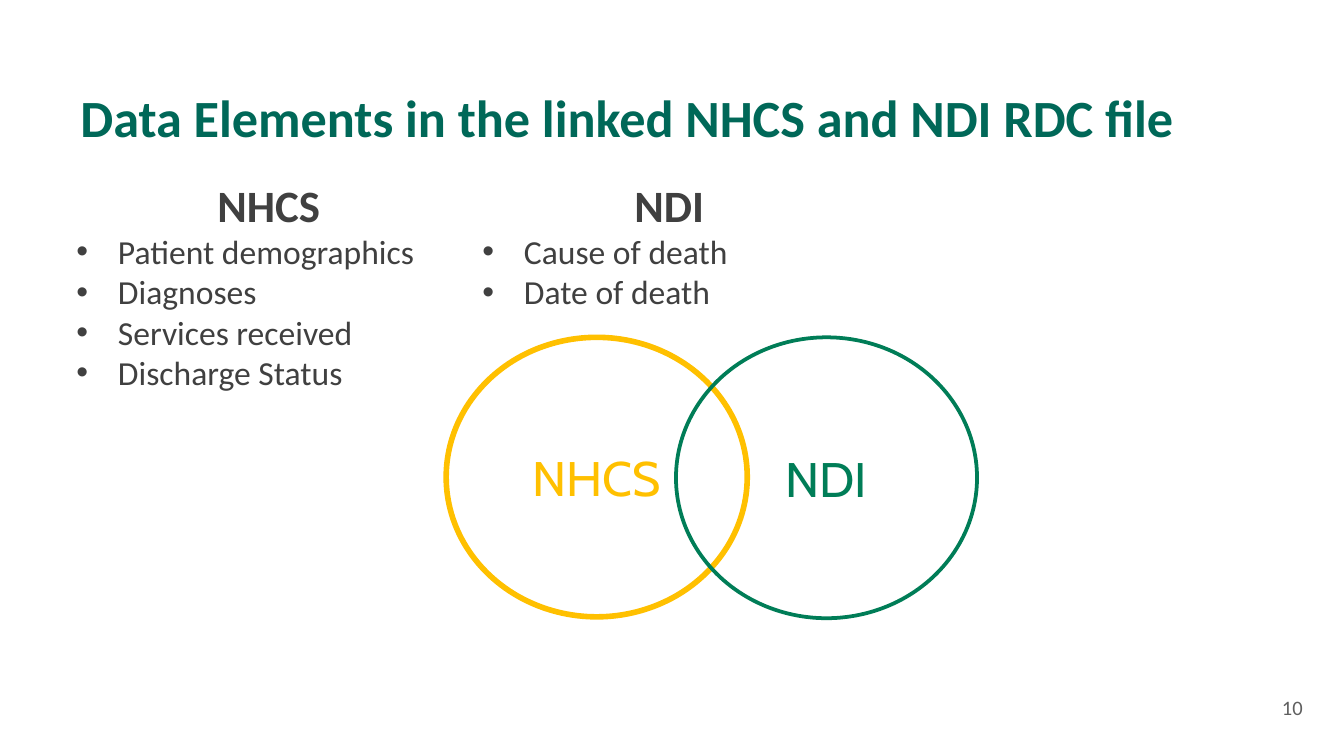
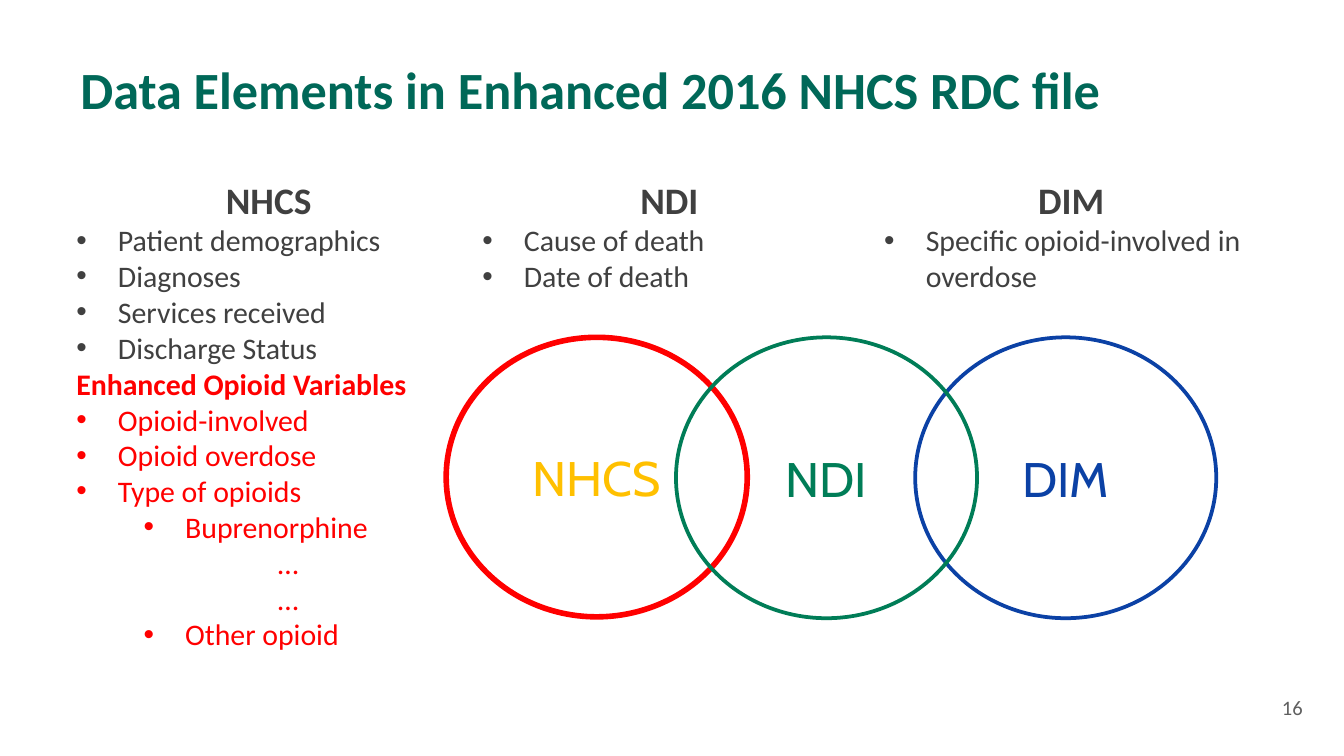
from lxml.etree import SubElement
from pptx import Presentation
from pptx.dml.color import RGBColor
from pptx.enum.shapes import MSO_SHAPE as SHAPE
from pptx.enum.text import MSO_ANCHOR as ANCHOR, PP_ALIGN as ALIGN
from pptx.oxml.ns import qn
from pptx.util import Inches, Pt

TEAL = RGBColor(0x00, 0x68, 0x58)
DARK = RGBColor(0x40, 0x40, 0x40)
GRAY = RGBColor(0x5F, 0x5F, 0x5F)
RED = RGBColor(0xFF, 0x00, 0x00)
GOLD = RGBColor(0xFF, 0xC0, 0x00)
GREEN = RGBColor(0x00, 0x7D, 0x57)
BLUE = RGBColor(0x0B, 0x41, 0xA5)

HANGING = 0.31
COLUMN_TOP = 1.27
CIRCLE_TOP = 2.51


def write(frame, text, size, color, font="Calibri", bold=False, align=ALIGN.LEFT,
          indent=0, bullet=False, spacing=None):
    """Fill the frame's empty first paragraph, or append one, with formatted text."""
    para = frame.paragraphs[0]
    if para.runs:
        para = frame.add_paragraph()
    para.alignment = align
    para.line_spacing = spacing
    props = para._p.get_or_add_pPr()
    props.set("marL", str(Inches(indent)))
    props.set("indent", str(Inches(-HANGING if bullet else 0)))
    if bullet:
        SubElement(props, qn("a:buFont"), typeface="Arial")
        SubElement(props, qn("a:buChar"), char="•")
    span = para.add_run()
    span.text = text
    span.font.name = font
    span.font.size = Pt(size)
    span.font.bold = bold
    span.font.color.rgb = color


def add_box(page, left, top, width, height, anchor=ANCHOR.TOP):
    frame = page.shapes.add_textbox(
        Inches(left), Inches(top), Inches(width), Inches(height)).text_frame
    frame.word_wrap = True
    frame.vertical_anchor = anchor
    return frame


# Column entries: (text, level), where level None is a bold subheading
# and "more" is an unbulleted continuation line.
patient_items = [("Patient demographics", 0), ("Diagnoses", 0),
                 ("Services received", 0), ("Discharge Status", 0)]
opioid_items = [("Enhanced Opioid Variables", None), ("Opioid-involved", 0),
                ("Opioid overdose", 0), ("Type of opioids", 0), ("Buprenorphine", 1),
                ("…", "more"), ("…", "more"), ("Other opioid", 1)]
death_items = [("Cause of death", 0), ("Date of death", 0)]
drug_items = [("Specific opioid-involved in overdose", 0)]

# Columns: heading, left, width, height, dark items, red items
# Circles: label, left, height, outline colour, outline width, label colour
ndi_circle = ("NDI", 5.03, 2.09, GREEN, 2, GREEN)
slides = [
    dict(number="10", title="Data Elements in the linked NHCS and NDI RDC file",
         title_top=0.21, heading_size=24, item_size=18,
         columns=[("NHCS", 0.47, 3.06, 2.05, patient_items, []),
                  ("NDI", 3.49, 2.98, 1.11, death_items, [])],
         circles=[("NHCS", 3.32, 2.08, GOLD, 3, GOLD), ndi_circle]),
    dict(number="16", title="Data Elements in Enhanced 2016 NHCS RDC file",
         title_top=0, heading_size=20, item_size=16,
         columns=[("NHCS", 0.47, 3.06, 3.67, patient_items, opioid_items),
                  ("NDI", 3.49, 2.98, 0.98, death_items, []),
                  ("DIM", 6.48, 2.98, 0.98, drug_items, [])],
         circles=[("NHCS", 3.32, 2.08, RED, 3, GOLD),
                  ("DIM", 6.81, 2.09, BLUE, 2, BLUE), ndi_circle]),
]

deck = Presentation()
deck.slide_width = Inches(10)
deck.slide_height = Inches(10) * 9 // 16

for content in slides:
    page = deck.slides.add_slide(deck.slide_layouts[6])
    write(add_box(page, 9.44, 5.12, 0.41, 0.29), content["number"], 11, GRAY)
    title = add_box(page, 0.5, content["title_top"], 9, 0.94, ANCHOR.BOTTOM)
    write(title, content["title"], 28, TEAL, bold=True, spacing=Pt(30))

    for heading, left, width, height, dark_items, red_items in content["columns"]:
        column = add_box(page, left, COLUMN_TOP, width, height)
        write(column, heading, content["heading_size"], DARK, bold=True,
              align=ALIGN.CENTER)
        for items, color in ((dark_items, DARK), (red_items, RED)):
            for text, level in items:
                if level is None:
                    write(column, text, content["item_size"], color, bold=True)
                elif level == "more":
                    write(column, text, content["item_size"], color, indent=1.5)
                else:
                    write(column, text, content["item_size"], color,
                          indent=HANGING + level * 0.5, bullet=True)

    for label, left, height, outline, weight, color in content["circles"]:
        circle = page.shapes.add_shape(SHAPE.OVAL, Inches(left), Inches(CIRCLE_TOP),
                                       Inches(2.24), Inches(height))
        circle.shadow.inherit = False
        circle.fill.background()
        circle.line.color.rgb = outline
        circle.line.width = Pt(weight)
        circle.text_frame.vertical_anchor = ANCHOR.MIDDLE
        write(circle.text_frame, label, 26, color, font="Cabin", align=ALIGN.CENTER)

deck.save("out.pptx")
